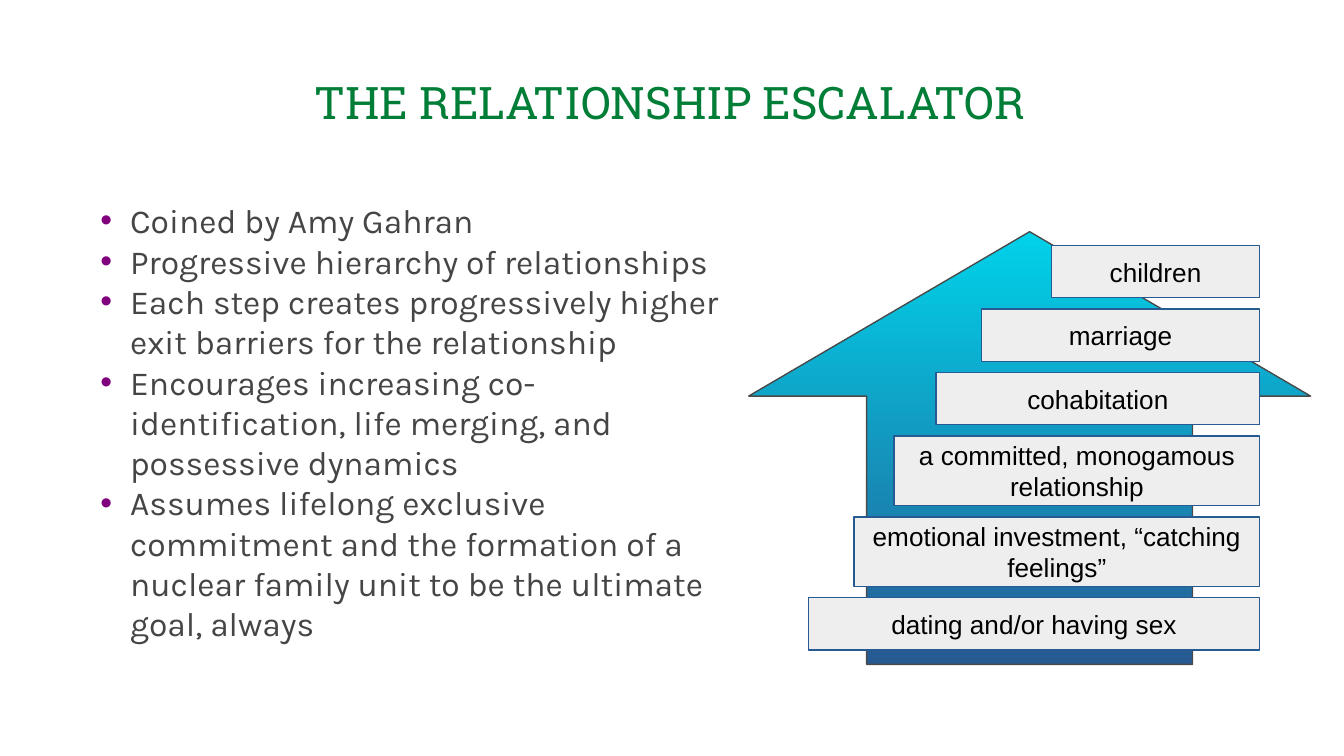
"""Build the relationship escalator slide: a bulleted list beside an arrow of steps."""
from lxml.etree import SubElement
from pptx import Presentation
from pptx.dml.color import RGBColor
from pptx.enum.shapes import MSO_SHAPE
from pptx.enum.text import MSO_ANCHOR, PP_ALIGN
from pptx.oxml.ns import qn
from pptx.util import Cm, Pt

COLOURS = {
    "title": "007D36",
    "body": "454545",
    "bullet": "80007E",
    "arrow_top": "00D2E9",
    "blue": "275A93",
    "arrow_line": "4A4A4A",
    "step": "EEEEEE",
    "step_text": "000000",
}
POINTS = [
    "Coined by Amy Gahran",
    "Progressive hierarchy of relationships",
    "Each step creates progressively higher exit barriers for the relationship",
    "Encourages increasing co-identification, life merging, and possessive dynamics",
    "Assumes lifelong exclusive commitment and the formation of a nuclear family "
    "unit to be the ultimate goal, always",
]
ONE_LINE, TWO_LINES = 0.99, 1.32
STEPS = [
    ("dating and/or having sex", 8.53, ONE_LINE),
    ("emotional investment, “catching feelings”", 7.67, TWO_LINES),
    ("a committed, monogamous relationship", 6.91, TWO_LINES),
    ("cohabitation", 6.12, ONE_LINE),
    ("marriage", 5.26, ONE_LINE),
    ("children", 3.94, ONE_LINE),
]
STEPS_RIGHT, STEPS_BOTTOM, STEP_GAP = 23.81, 12.29, 0.21


def colour(name):
    return RGBColor.from_string(COLOURS[name])


def write(paragraph, text, *, font, size, color, align=PP_ALIGN.LEFT):
    paragraph.alignment = align
    run = paragraph.add_run()
    run.text = text
    run.font.name = font
    run.font.size = Pt(size)
    run.font.color.rgb = colour(color)


def add_bullet(paragraph, color):
    properties = paragraph._p.get_or_add_pPr()
    properties.set("marL", str(Cm(0.94)))
    properties.set("indent", str(Cm(-0.56)))
    bullet_color = SubElement(properties, qn("a:buClr"))
    SubElement(bullet_color, qn("a:srgbClr"), val=COLOURS[color])
    SubElement(properties, qn("a:buFont"), typeface="Arial")
    SubElement(properties, qn("a:buChar"), char="•")


class SlideBuilder:
    """Holds the fonts and the current slide, and adds each kind of element."""

    title_font, body_font, step_font = "Roboto Slab", "Karla", "Arial"

    def __init__(self, slide):
        self.slide = slide

    def title(self, text, left, top, width, height):
        title = self.slide.shapes.title
        title.left, title.top = Cm(left), Cm(top)
        title.width, title.height = Cm(width), Cm(height)
        frame = title.text_frame
        frame.vertical_anchor = MSO_ANCHOR.MIDDLE
        write(frame.paragraphs[0], text, font=self.title_font, size=24,
              color="title", align=PP_ALIGN.CENTER)

    def bullets(self, points, left, top, width, height):
        box = self.slide.shapes.add_textbox(Cm(left), Cm(top), Cm(width), Cm(height))
        frame = box.text_frame
        frame.word_wrap = True
        for index, point in enumerate(points):
            paragraph = frame.add_paragraph() if index else frame.paragraphs[0]
            add_bullet(paragraph, "bullet")
            write(paragraph, point, font=self.body_font, size=18, color="body")

    def shape(self, kind, left, top, width, height, line):
        shape = self.slide.shapes.add_shape(kind, Cm(left), Cm(top), Cm(width), Cm(height))
        shape.shadow.inherit = False
        shape.line.color.rgb = colour(line)
        shape.line.width = Pt(0.75)
        return shape

    def arrow(self, left, top, width, height):
        arrow = self.shape(MSO_SHAPE.UP_ARROW, left, top, width, height, "arrow_line")
        arrow.adjustments[0] = 0.58
        arrow.adjustments[1] = 0.38
        arrow.fill.gradient()
        arrow.fill.gradient_angle = 270
        for stop, name in zip(arrow.fill.gradient_stops, ("arrow_top", "blue")):
            stop.color.rgb = colour(name)

    def step(self, text, left, top, width, height):
        step = self.shape(MSO_SHAPE.RECTANGLE, left, top, width, height, "blue")
        step.fill.solid()
        step.fill.fore_color.rgb = colour("step")
        frame = step.text_frame
        frame.word_wrap = True
        frame.vertical_anchor = MSO_ANCHOR.MIDDLE
        frame.margin_top = frame.margin_bottom = Cm(0.25)
        write(frame.paragraphs[0], text, font=self.step_font, size=14,
              color="step_text", align=PP_ALIGN.CENTER)


def main():
    presentation = Presentation()
    presentation.slide_width, presentation.slide_height = Cm(25.4), Cm(14.29)
    builder = SlideBuilder(presentation.slides.add_slide(presentation.slide_layouts[5]))
    builder.title("THE RELATIONSHIP ESCALATOR", 1.19, 0.84, 22.94, 2.16)
    builder.bullets(POINTS, 1.27, 3.66, 12.9, 9.12)
    builder.arrow(14.15, 4.38, 10.62, 8.18)
    bottom = STEPS_BOTTOM
    for text, width, height in STEPS:
        builder.step(text, STEPS_RIGHT - width, bottom - height, width, height)
        bottom -= height + STEP_GAP
    presentation.save("out.pptx")


if __name__ == "__main__":
    main()
